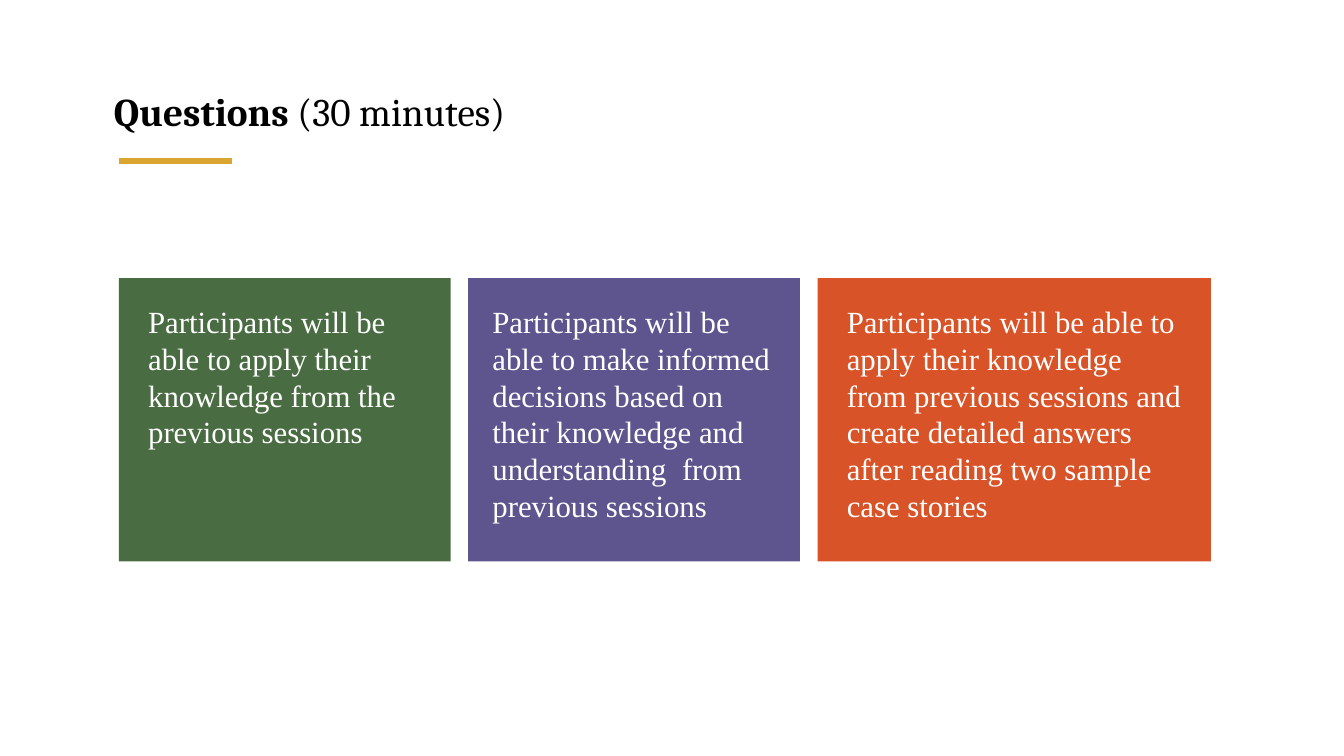
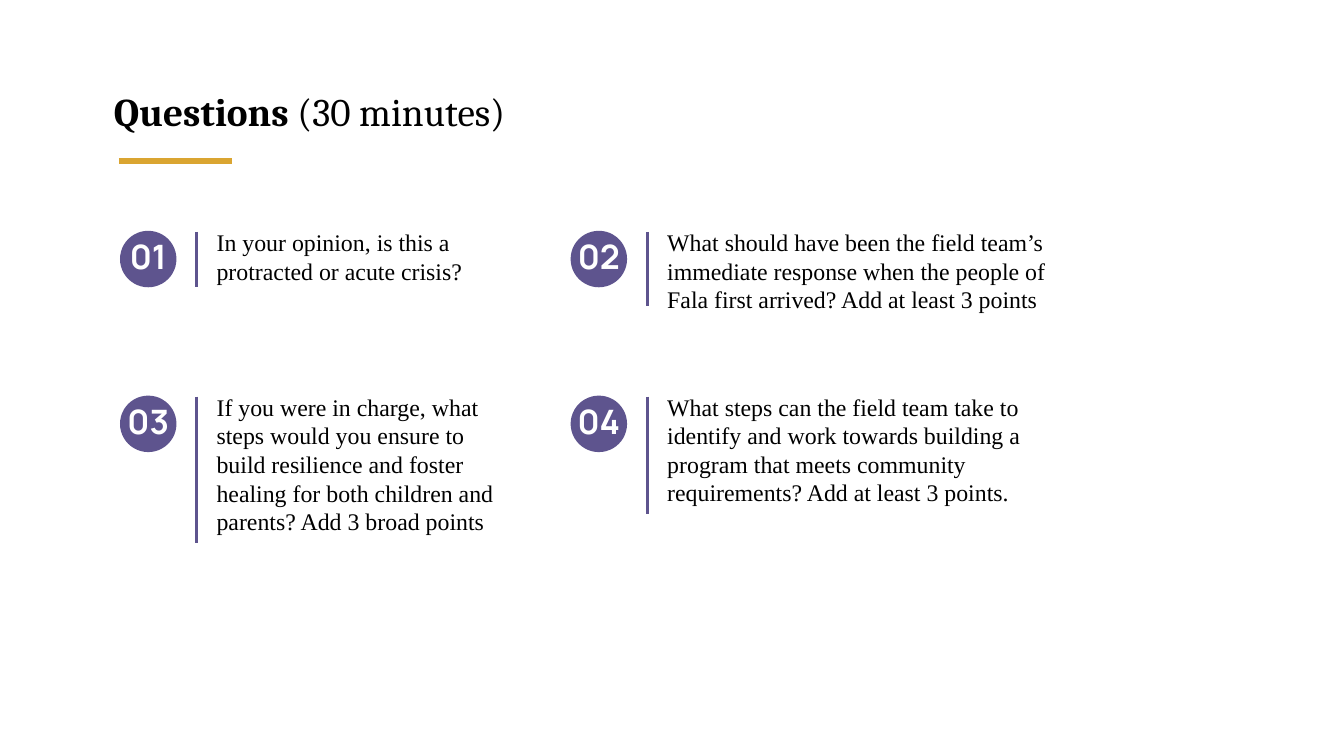
from lxml.etree import SubElement
from pptx import Presentation
from pptx.dml.color import RGBColor
from pptx.enum.shapes import MSO_CONNECTOR, MSO_SHAPE
from pptx.enum.text import MSO_ANCHOR, MSO_AUTO_SIZE, PP_ALIGN
from pptx.oxml.ns import qn
from pptx.util import Inches, Pt

COLORS = {
    "ink": "000000",
    "paper": "FFFFFF",
    "gold": "DAA531",
    "green": "4A6C43",
    "purple": "5E548E",
    "orange": "D85327",
}
TITLE = {"name": "Cambria", "size": Pt(28)}
CARD = {"name": "Times New Roman", "size": Pt(22), "bold": False}
QUESTION = {"name": "Times New Roman", "size": Pt(17), "bold": False}
NUMBER = {"name": "Manrope", "size": Pt(24), "bold": True}

deck = Presentation()
deck.slide_width = Inches(13.33)
deck.slide_height = Inches(7.5)


def place(x, y, w, h):
    across, down = deck.slide_width / 100, deck.slide_height / 100
    return round(x * across), round(y * down), round(w * across), round(h * down)


def write(frame, text, style, color, anchor=MSO_ANCHOR.TOP, align=PP_ALIGN.LEFT):
    frame.auto_size = MSO_AUTO_SIZE.NONE
    frame.vertical_anchor = anchor
    paragraph = frame.paragraphs[0]
    paragraph.alignment = align
    run = paragraph.add_run()
    run.text = text
    for key, value in style.items():
        setattr(run.font, key, value)
    run.font.color.rgb = RGBColor.from_string(COLORS[color])


title_layout = deck.slide_layouts[5]
heading = title_layout.placeholders[0]
heading.left, heading.top, heading.width, heading.height = place(7.73, 10.93, 67.74, 7.6)

left_edge = 8.85
goals, questions = [deck.slides.add_slide(title_layout) for _ in range(2)]
rules = []
for slide in (goals, questions):
    for text, bold in (("Questions ", True), ("(30 minutes)", False)):
        write(slide.shapes.title.text_frame, text, {**TITLE, "bold": bold}, "ink")
    rules.append((slide, (left_edge, 21.33, 8.4, 0), "gold", 4.5))

cards = [
    ("green", 24.68, 0.29,
     "Participants will be able to apply their knowledge from the previous sessions"),
    ("purple", 24.68, 0.24,
     "Participants will be able to make informed decisions based on their knowledge "
     "and understanding  from previous sessions"),
    ("orange", 29.26, 0.29,
     "Participants will be able to apply their knowledge from previous sessions and "
     "create detailed answers after reading two sample case stories"),
]
card_gap = 1.31
card_left = left_edge
for color, width, inset, text in cards:
    card = goals.shapes.add_shape(MSO_SHAPE.RECTANGLE, *place(card_left, 36.8, width, 37.47))
    card.shadow.inherit = False
    card.fill.solid()
    card.fill.fore_color.rgb = RGBColor.from_string(COLORS[color])
    card.line.fill.background()
    frame = card.text_frame
    frame.word_wrap = True
    frame.margin_left = Inches(inset)
    frame.margin_top = Inches(0.24)
    frame.margin_right = Inches(0.26)
    write(frame, text, CARD, "paper")
    card_left += width + card_gap

column_widths = (23.18, 32.63)
prompts = [
    (2, 7.33, "In your opinion, is this a protracted or acute crisis?"),
    (3, 9.87,
     "What should have been the field team’s immediate response when the people of "
     "Fala first arrived? Add at least 3 points"),
    (5, 19.33,
     "If you were in charge, what steps would you ensure to build resilience and "
     "foster healing for both children and parents? Add 3 broad points"),
    (4, 15.47,
     "What steps can the field team take to identify and work towards building a "
     "program that meets community requirements? Add at least 3 points."),
]
for index, (lines, rule_height, text) in enumerate(prompts):
    row, column = divmod(index, 2)
    x, y = 8.93 + column * 33.53, 30.53 + row * 21.8
    badge = questions.shapes.add_shape(MSO_SHAPE.OVAL, *place(x, y, 4.2, 7.47))
    badge.shadow.inherit = False
    badge.fill.solid()
    badge.fill.fore_color.rgb = RGBColor.from_string(COLORS["purple"])
    badge.line.fill.background()
    frame = badge.text_frame
    frame.word_wrap = False
    frame.margin_left = frame.margin_right = frame.margin_top = 0
    frame.margin_bottom = Inches(0.06)
    write(frame, f"{index + 1:02}", NUMBER, "paper", MSO_ANCHOR.MIDDLE, PP_ALIGN.CENTER)

    prompt = questions.shapes.add_textbox(
        *place(x + 6.45, y - 1.07, column_widths[column], lines * 3.83 + 1.33))
    prompt.text_frame.word_wrap = True
    write(prompt.text_frame, text, QUESTION, "ink")
    rules.append((questions, (x + 5.7, y + 0.13, 0, rule_height), "purple", 2.25))

for slide, box, color, weight in rules:
    x, y, width, height = place(*box)
    rule = slide.shapes.add_connector(MSO_CONNECTOR.STRAIGHT, x, y, x + width, y + height)
    rule.line.color.rgb = RGBColor.from_string(COLORS[color])
    rule.line.width = Pt(weight)
    SubElement(rule._element.spPr, qn("a:effectLst"))

deck.save("out.pptx")
